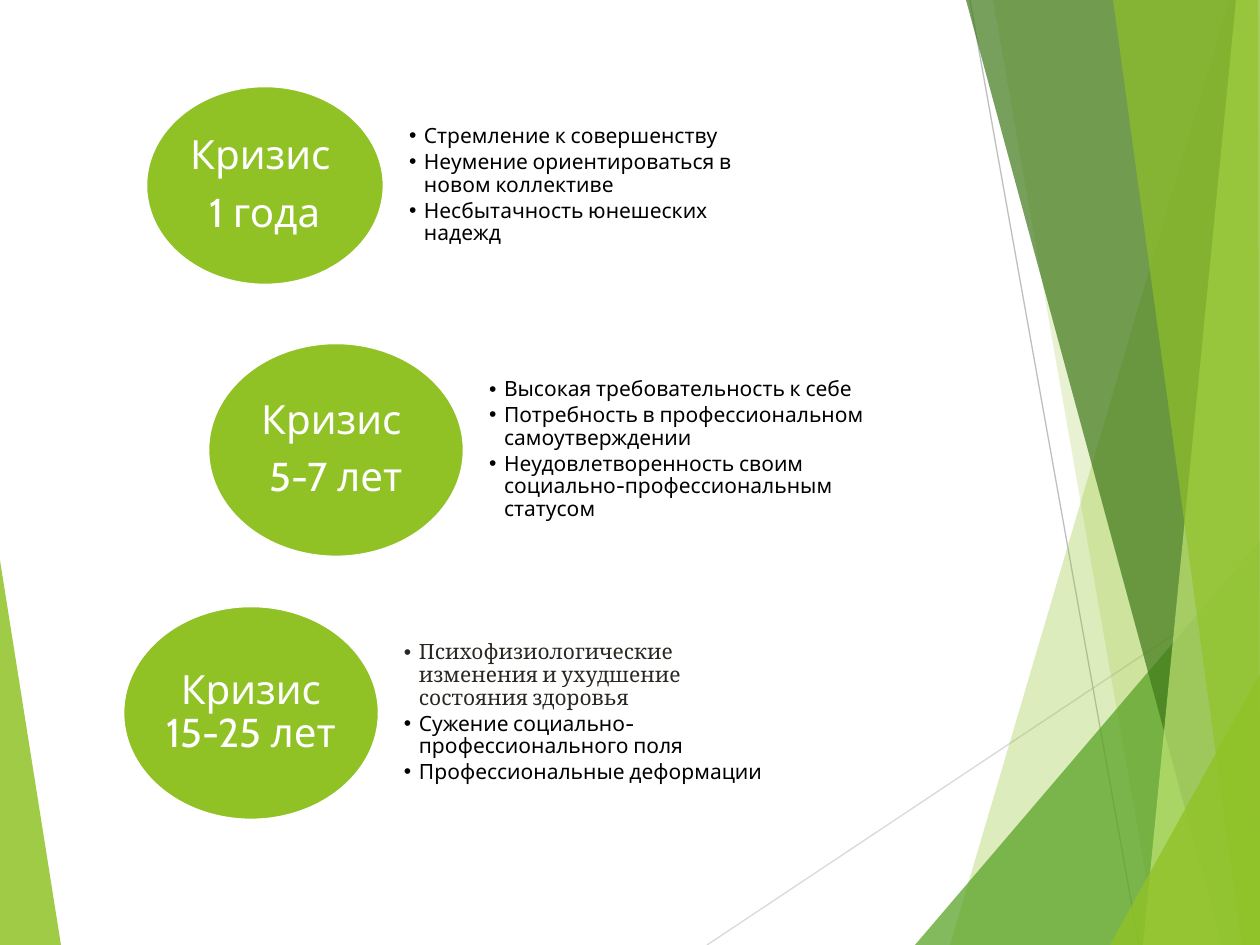
"""Slide on the professional crises of three career stages."""
import pptx
import pptx.util
import pptx.dml.color
import pptx.enum.shapes
import pptx.enum.text
import pptx.oxml.ns
import lxml.etree

RGBColor = pptx.dml.color.RGBColor
WHITE = RGBColor(0xFF, 0xFF, 0xFF)
BLACK = RGBColor(0x00, 0x00, 0x00)
INK = RGBColor(0x2A, 0x27, 0x23)
LIME = RGBColor(0x90, 0xC2, 0x26)
PALE_LIME = RGBColor(0xC0, 0xE4, 0x74)
GREEN = RGBColor(0x54, 0xA0, 0x21)
DARK_GREEN = RGBColor(0x3F, 0x78, 0x19)
LIGHT_GREY = RGBColor(0xD9, 0xD9, 0xD9)
GREY = RGBColor(0xBF, 0xBF, 0xBF)

SCALE = pptx.util.Inches(1) / 126
W, H = 1260, 945
GAP = 25
qn = pptx.oxml.ns.qn


def px(length):
    return round(length * SCALE)


def apply(target, values):
    for name, value in values.items():
        setattr(target, name, value)


deck = pptx.Presentation()
apply(deck, {"slide_width": px(W), "slide_height": px(H)})
slide = deck.slides.add_slide(deck.slide_layouts[4])
holders = {holder.placeholder_format.idx: holder for holder in slide.placeholders}

facets = [
    (LIME, 85, [(0, 560), (61, H), (0, H)]),
    (LIME, 30, [(1229, 0), (950, H), (W, H), (W, 0)]),
    (LIME, 20, [(993, 0), (1158, H), (W, H), (W, 0)]),
    (GREEN, 72, [(915, H), (W, 541), (W, H)]),
    (DARK_GREEN, 70, [(966, 0), (1222, H), (W, H), (W, 0)]),
    (PALE_LIME, 70, [(1236, 0), (1143, H), (W, H), (W, 0)]),
    (LIME, 65, [(1113, 0), (1242, H), (W, H), (1258, 0)]),
    (LIME, 80, [(1110, H), (W, 674), (W, H)]),
]
rays = [(LIGHT_GREY, (707, H, W, 577)), (GREY, (970, 0, 1139, H))]

for color, ends in rays:
    ray = slide.shapes.add_connector(
        pptx.enum.shapes.MSO_CONNECTOR.STRAIGHT, *map(px, ends))
    ray.line.color.rgb = color
    ray.line.width = pptx.util.Pt(0.75)
    lxml.etree.SubElement(ray._element.spPr, qn("a:effectLst"))

for color, opacity, corners in facets:
    outline = slide.shapes.build_freeform(*corners[0], scale=SCALE)
    outline.add_line_segments(corners[1:], close=True)
    facet = outline.convert_to_shape()
    facet.shadow.inherit = False
    facet.line.fill.background()
    facet.fill.solid()
    facet.fill.fore_color.rgb = color
    tint = facet._element.spPr.find(qn("a:solidFill")).find(qn("a:srgbClr"))
    lxml.etree.SubElement(tint, qn("a:alpha"), val=str(opacity * 1000))

crises = [
    (1, (146, 86, 238, 199), ["Кризис ", "1 года"], [
        "Стремление к совершенству",
        "Неумение ориентироваться в новом коллективе",
        "Несбытачность юнешеских надежд"]),
    (2, (208, 343, 256, 214), ["Кризис ", "5-7 лет"], [
        "Высокая требовательность к себе",
        "Потребность в профессиональном самоутверждении",
        "Неудовлетворенность своим социально-профессиональным статусом"]),
    (4, (123, 606, 256, 214), ["Кризис 15-25 лет"], [
        "Психофизиологические изменения и ухудшение состояния здоровья",
        "Сужение социально-профессионального поля",
        "Профессиональные деформации"]),
]
frame_format = {
    "word_wrap": True,
    "auto_size": pptx.enum.text.MSO_AUTO_SIZE.NONE,
    "vertical_anchor": pptx.enum.text.MSO_ANCHOR.MIDDLE,
    "margin_left": 0, "margin_right": 0, "margin_top": 0, "margin_bottom": 0,
}
stage_format = {
    "alignment": pptx.enum.text.PP_ALIGN.CENTER, "line_spacing": 0.9,
    "space_after": pptx.util.Pt(8),
}
symptom_format = {
    "level": 1, "alignment": pptx.enum.text.PP_ALIGN.LEFT, "line_spacing": 0.9,
    "space_before": pptx.util.Pt(0), "space_after": pptx.util.Pt(1.8),
}
stage_font = {"size": pptx.util.Pt(23), "name": "Cabin"}
symptom_font = {"size": pptx.util.Pt(12), "name": "Cabin", "bold": False}

for idx, (left, top, width, height), stage_lines, symptoms in crises:
    stage = slide.shapes.add_shape(
        pptx.enum.shapes.MSO_SHAPE.OVAL, *map(px, (left, top, width, height)))
    stage.shadow.inherit = False
    stage.fill.solid()
    stage.fill.fore_color.rgb = LIME
    stage.line.color.rgb = WHITE
    stage.line.width = pptx.util.Pt(1.5)
    apply(stage.text_frame, frame_format)
    stage.text_frame.text = "\n".join(stage_lines)
    for paragraph in stage.text_frame.paragraphs:
        apply(paragraph, stage_format)
        apply(paragraph.font, stage_font)
        paragraph.font.color.rgb = WHITE

    signs = holders.pop(idx)
    apply(signs, {"left": px(left + width + GAP), "top": px(top),
                  "width": px(width * 1.5), "height": px(height)})
    apply(signs.text_frame, frame_format)
    signs.text_frame.text = "\n".join(symptoms)
    for paragraph, symptom in zip(signs.text_frame.paragraphs, symptoms):
        apply(paragraph, symptom_format)
        properties = paragraph._p.get_or_add_pPr()
        properties.set("marL", str(px(15)))
        properties.set("indent", str(px(-15)))
        lxml.etree.SubElement(properties, qn("a:buFont"), typeface="Arial")
        lxml.etree.SubElement(properties, qn("a:buChar"), char="•")
        apply(paragraph.font, symptom_font)
        paragraph.font.color.rgb = BLACK

health = signs.text_frame.paragraphs[0].font
health.name = "Cambria"
health.color.rgb = INK

for unused in holders.values():
    unused._element.getparent().remove(unused._element)

deck.save("out.pptx")
